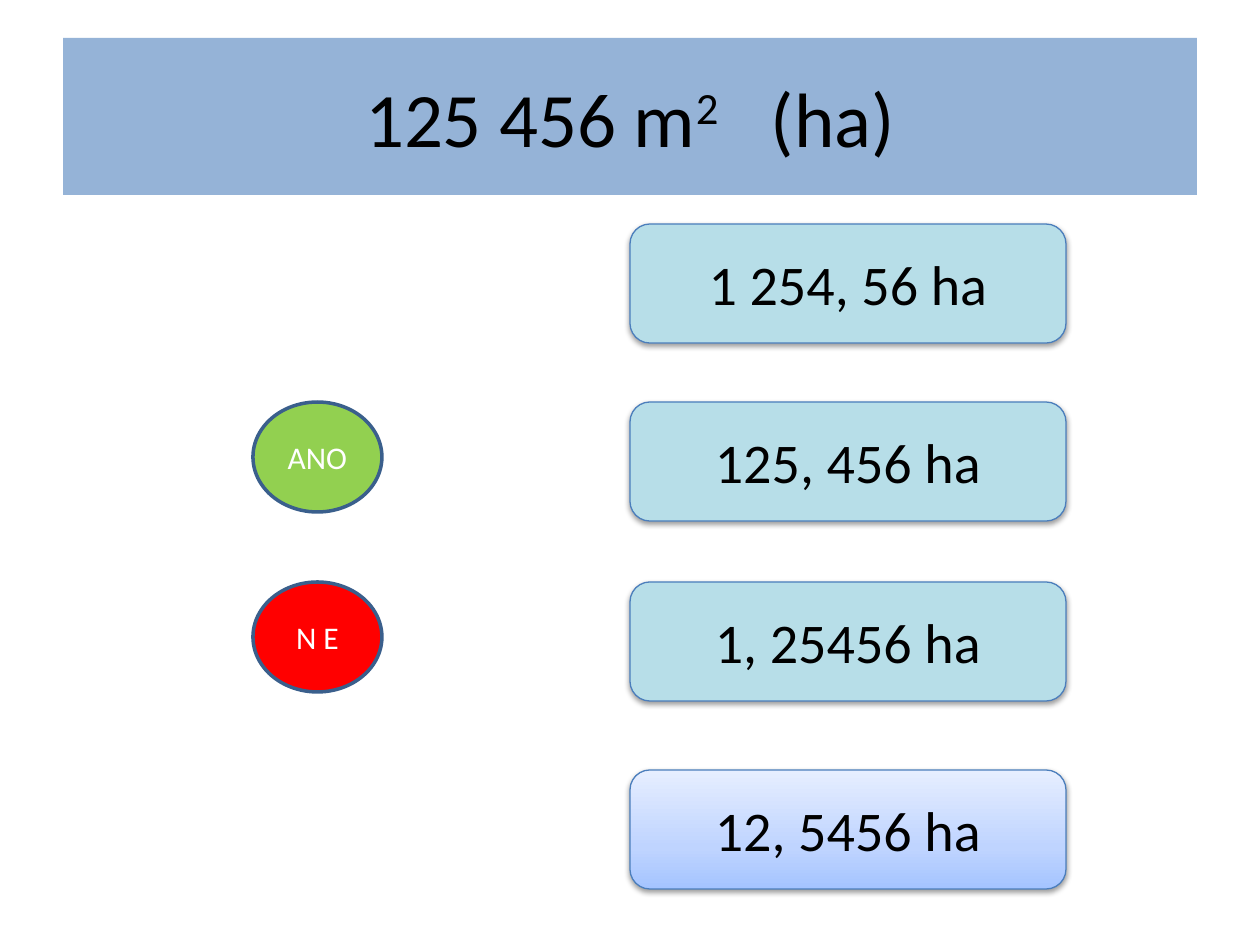
import copy

import pptx
import pptx.dml.color
import pptx.enum.dml
import pptx.enum.shapes
import pptx.enum.text
import pptx.oxml
import pptx.oxml.ns
import pptx.util

RGBColor = pptx.dml.color.RGBColor
BLACK = RGBColor(0x00, 0x00, 0x00)
WHITE = RGBColor(0xFF, 0xFF, 0xFF)
TITLE_BLUE = RGBColor(0x95, 0xB3, 0xD7)
GREEN = RGBColor(0x92, 0xD0, 0x50)
RED = RGBColor(0xFF, 0x00, 0x00)
AQUA = RGBColor(0xB7, 0xDE, 0xE8)
BUTTON_LINE = RGBColor(0x3A, 0x5F, 0x8C)
ANSWER_LINE = RGBColor(0x4B, 0x7E, 0xBC)
GRADIENT = [
    (0, RGBColor(0xA4, 0xC4, 0xFF)),
    (0.35, RGBColor(0xBF, 0xD4, 0xFF)),
    (1, RGBColor(0xE6, 0xEE, 0xFF)),
]
SHADOW = (
    f'<a:outerShdw {pptx.oxml.ns.nsdecls("a")} blurRad="40000" dist="20000" dir="5400000" rotWithShape="0">'
    '<a:srgbClr val="000000"><a:alpha val="38000"/></a:srgbClr></a:outerShdw>'
)


def px(length):
    return round(length * 914400 / 126)


def add_label(kind, box, text, size, color, fill, line, line_width):
    shape = slide.shapes.add_shape(kind, *map(px, box))
    shape.shadow.inherit = False
    shape.fill.solid()
    shape.fill.fore_color.rgb = fill
    shape.line.color.rgb = line
    shape.line.width = pptx.util.Pt(line_width)
    shape.text_frame.vertical_anchor = pptx.enum.text.MSO_ANCHOR.MIDDLE
    paragraph = shape.text_frame.paragraphs[0]
    paragraph.text = text
    paragraph.alignment = pptx.enum.text.PP_ALIGN.CENTER
    paragraph.font.name = "Calibri"
    paragraph.font.size = pptx.util.Pt(size)
    paragraph.font.color.rgb = color
    return shape


presentation = pptx.Presentation()
presentation.slide_width = px(1260)
presentation.slide_height = px(945)
slide = presentation.slides.add_slide(presentation.slide_layouts[5])

title = slide.shapes.title
title.left, title.top, title.width, title.height = map(px, (63, 38, 1134, 157))
title.fill.solid()
title.fill.fore_color.rgb = TITLE_BLUE
title.text_frame.vertical_anchor = pptx.enum.text.MSO_ANCHOR.MIDDLE
paragraph = title.text_frame.paragraphs[0]
paragraph.alignment = pptx.enum.text.PP_ALIGN.CENTER
paragraph.font.name = "Calibri"
paragraph.font.size = pptx.util.Pt(44)
paragraph.font.color.rgb = BLACK
for text, baseline in [("125 456 m", 0), ("2", 30000), ("   (ha)", 0)]:
    run = paragraph.add_run()
    run.text = text
    if baseline:
        run.font._element.set("baseline", str(baseline))

for top, text, fill in [(402, "ANO", GREEN), (582, "N E", RED)]:
    add_label(pptx.enum.shapes.MSO_SHAPE.OVAL, (253, top, 129, 110),
              text, 18, WHITE, fill, BUTTON_LINE, 2)

answers = [
    (224, "1 254, 56 ha"),
    (402, "125, 456 ha"),
    (582, "1, 25456 ha"),
    (770, "12, 5456 ha"),
]
for top, text in answers:
    answer = add_label(pptx.enum.shapes.MSO_SHAPE.ROUNDED_RECTANGLE, (630, top, 436, 119),
                       text, 32, BLACK, AQUA, ANSWER_LINE, 0.75)
    effects = answer._element.spPr.find(pptx.oxml.ns.qn("a:effectLst"))
    effects.append(pptx.oxml.parse_xml(SHADOW))

answer.fill.gradient()
answer.fill.gradient_angle = 90
stop_list = answer._element.spPr.find(".//" + pptx.oxml.ns.qn("a:gsLst"))
stop_list.append(copy.deepcopy(stop_list[0]))
for stop, (position, color) in zip(answer.fill.gradient_stops, GRADIENT):
    stop.position = position
    stop.color.rgb = color

presentation.save("out.pptx")
